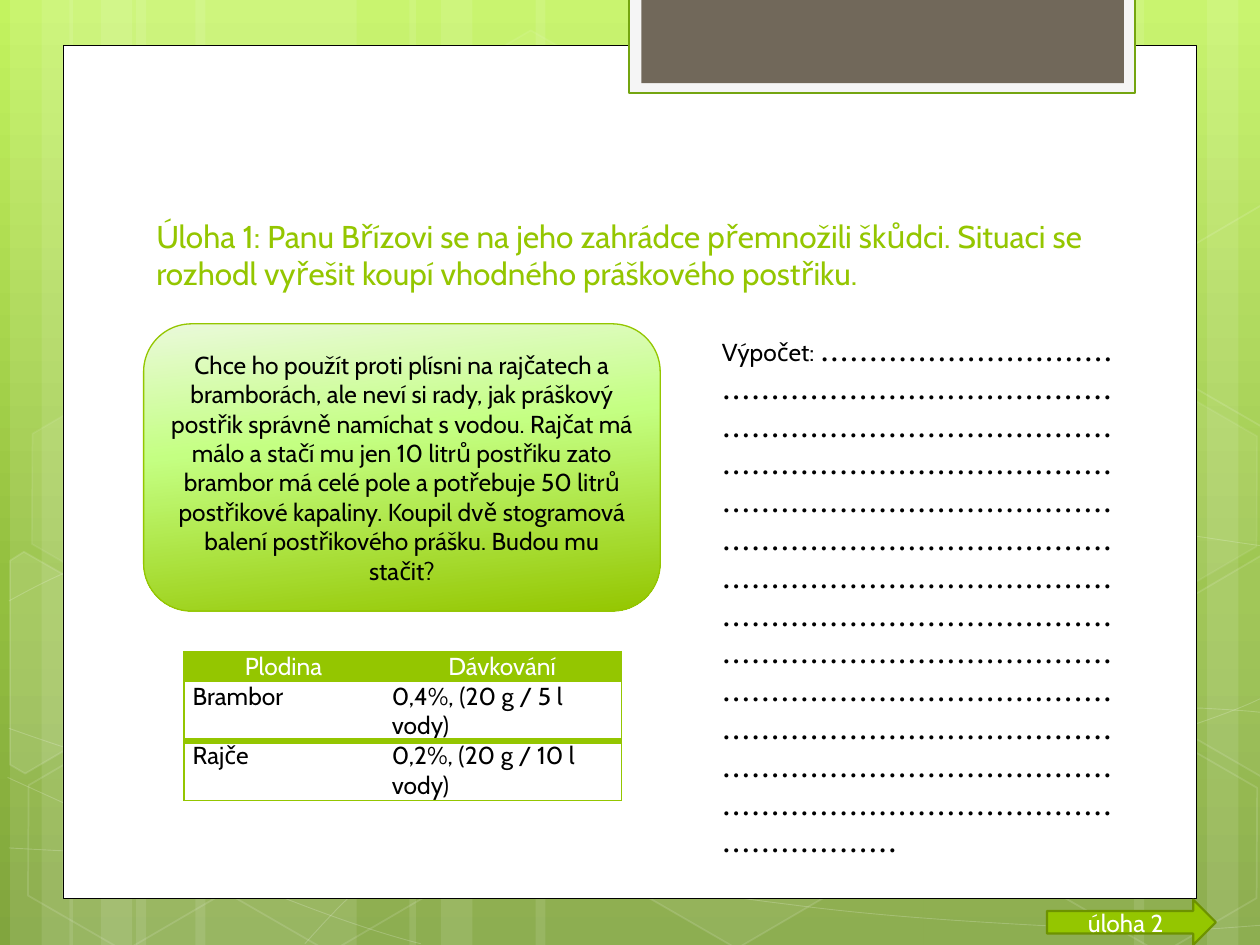
import lxml.etree
import pptx
import pptx.dml.color
import pptx.enum.shapes
import pptx.enum.text
import pptx.oxml
import pptx.oxml.ns
import pptx.util

COLORS = {"green": "94C600", "dark": "6D9200", "edge": "74A510", "white": "FFFFFF",
          "black": "000000", "pale": "F5F5F5", "brown": "71685A"}
SKY = [(0, "C3F35F"), (62, "93BF3F"), (100, "81A53E")]
LEAF = [(0, "EAF9DA"), (40, "C4FF82"), (100, "94C600")]
FONT = "Cabin"
PLAIN_TABLE = "{2D5ABB26-0587-4C30-8999-92F81FD0307C}"
SHAPE = pptx.enum.shapes.MSO_SHAPE
ALIGN = pptx.enum.text.PP_ALIGN
ANCHOR = pptx.enum.text.MSO_ANCHOR
qn = pptx.oxml.ns.qn

# Left edge and width of the full-height light stripes
STRIPES = [(1.08, 1.75), (0.08, 0.5), (0.33, 0.83), (1.55, 1.75), (0.55, 0.5), (0.8, 0.83),
           (7.33, 1.75), (9.58, 0.5), (9, 0.83), (4.25, 3.08), (3.25, 0.5), (3.5, 0.83)]
# Start point, then three points for each Bezier section
CURVES = [
    [(.07, 6.73), (.61, 6.76), (1.15, 6.79), (1.9, 6.78), (2.65, 6.77), (3.58, 6.75),
     (4.58, 6.65), (5.58, 6.55), (7, 6.36), (7.92, 6.17), (8.83, 5.98), (9.77, 5.68), (10.07, 5.51)],
    [(.07, 4.77), (.36, 4.61), (.65, 4.46), (1.21, 4.31), (1.78, 4.16), (2.59, 3.94),
     (3.47, 3.87), (4.36, 3.8), (5.44, 3.79), (6.54, 3.87), (7.64, 3.95), (9.47, 4.26), (10.07, 4.34)],
    [(.06, 6.17), (1.27, 6.72), (2.47, 7.27), (3.34, 7.49)],
    [(.07, 5.78), (.38, 5.89), (.7, 6), (1.28, 6.16), (1.86, 6.31), (2.73, 6.56), (3.57, 6.73),
     (4.4, 6.9), (5.45, 7.08), (6.28, 7.18), (7.11, 7.29), (8, 7.33), (8.53, 7.36),
     (9.05, 7.4), (9.19, 7.38), (9.45, 7.38), (9.71, 7.37), (9.89, 7.35), (10.07, 7.34)],
    [(2.42, 7.49), (2.6, 7.29), (2.78, 7.09), (3.02, 6.91), (3.26, 6.73), (3.6, 6.53), (3.88, 6.39),
     (4.16, 6.25), (4.33, 6.19), (4.7, 6.09), (5.06, 5.99), (5.73, 5.85), (6.08, 5.78),
     (6.44, 5.71), (6.49, 5.71), (6.8, 5.69), (7.11, 5.66), (7.6, 5.63), (7.94, 5.62),
     (8.29, 5.61), (8.86, 5.62), (8.86, 5.62), (9.1, 5.62), (9.3, 5.62), (9.53, 5.62),
     (9.71, 5.63), (9.88, 5.64), (9.97, 5.65), (10.06, 5.66), (10.03, 5.65), (10.06, 5.66)],
]
# Left, top, fill opacity (0 is no fill), line opacity
HEXAGONS = [(3.34, 0.36, 4, 8), (4.97, 5.89, 6, 12), (0.11, 5.91, 0, 12), (0.14, 3.12, 7, 8),
            (1.74, 5.92, 0, 12), (7.53, 4.53, 10, 12), (8.34, 5.93, 0, 12), (8.34, 3.14, 7, 8)]
# Hexagons cut off by the slide's edge: fill opacity, corners
CUT_HEXAGONS = [
    (10, [(.08, 4.45), (.19, 4.38), (.96, 4.82), (.95, 5.7), (.2, 6.14), (.08, 6.07)]),
    (4, [(9.26, 4.85), (10.01, 4.41), (10.09, 4.46), (10.09, 6.13), (10.02, 6.17), (9.26, 5.73)]),
    (0, [(9.26, 2.07), (10.01, 1.63), (10.1, 1.68), (10.09, 3.35), (10.02, 3.39), (9.26, 2.95)]),
]


def inches(*values):
    return [pptx.util.Inches(value) for value in values]


def rgb(name):
    return pptx.dml.color.RGBColor.from_string(COLORS[name])


def paint(fill, name, opacity=100):
    """Solid fill, partly transparent when opacity is below 100; none at 0."""
    if not (name and opacity):
        fill.background()
        return
    fill.solid()
    fill.fore_color.rgb = rgb(name)
    if opacity < 100:
        color = fill._xPr.find(".//" + qn("a:srgbClr"))
        lxml.etree.SubElement(color, qn("a:alpha"), val=str(opacity * 1000))


def paint_gradient(fill, stops, angle):
    fill.gradient()
    gradient = fill._xPr.find(qn("a:gradFill"))
    stop_list = gradient.find(qn("a:gsLst"))
    for stop in list(stop_list):
        stop_list.remove(stop)
    for position, color in stops:
        stop = lxml.etree.SubElement(stop_list, qn("a:gs"), pos=str(position * 1000))
        lxml.etree.SubElement(stop, qn("a:srgbClr"), val=color)
    gradient.find(qn("a:lin")).set("ang", str(angle * 60000))


def style(shape, fill=None, opacity=100, line=None, width=1, line_opacity=100):
    shape.shadow.inherit = False
    paint(shape.fill, fill, opacity)
    paint(shape.line.fill, line, line_opacity)
    if line:
        shape.line.width = pptx.util.Pt(width)


def add_box(page, kind, at, **look):
    box = page.shapes.add_shape(kind, *inches(*at))
    style(box, **look)
    return box


def add_outline(page, points, close, **look):
    corners = [inches(*point) for point in points]
    builder = page.shapes.build_freeform(*corners[0])
    builder.add_line_segments(corners[1:], close=close)
    outline = builder.convert_to_shape()
    style(outline, **look)
    return outline


def bend(outline):
    """Turn every three straight segments into one Bezier section."""
    track = outline._element.find(".//" + qn("a:path"))
    segments = track.findall(qn("a:lnTo"))
    for first in range(0, len(segments), 3):
        section = lxml.etree.SubElement(track, qn("a:cubicBezTo"))
        for segment in segments[first:first + 3]:
            section.append(segment[0])
            track.remove(segment)


def add_run(para, text, color="black", size=14, font=FONT):
    span = para.add_run()
    span.text = text
    span.font.size = pptx.util.Pt(size)
    span.font.name = font
    span.font.color.rgb = rgb(color)


def write(frame, text, color="black", size=14, align=ALIGN.CENTER, anchor=ANCHOR.MIDDLE):
    frame.word_wrap = True
    frame.auto_size = pptx.enum.text.MSO_AUTO_SIZE.NONE
    frame.vertical_anchor = anchor
    para = frame.paragraphs[0]
    para.alignment = align
    add_run(para, text, color, size)


def add_border(cell, side, width):
    edge = lxml.etree.Element(qn("a:ln" + side), w=str(int(pptx.util.Pt(width))))
    fill = lxml.etree.SubElement(edge, qn("a:solidFill"))
    lxml.etree.SubElement(fill, qn("a:srgbClr"), val=COLORS["green"])
    properties = cell._tc.get_or_add_tcPr()
    properties.insert(len(properties) - 1, edge)


def add_dose_table(page, at, rows, widths):
    table = page.shapes.add_table(len(rows), len(widths), *inches(*at)).table
    table._tbl.tblPr.find(qn("a:tableStyleId")).text = PLAIN_TABLE
    for column, width in zip(table.columns, widths):
        column.width = pptx.util.Inches(width)
    for r, texts in enumerate(rows):
        table.rows[r].height = pptx.util.Inches(0.23)
        for c, text in enumerate(texts):
            cell = table.cell(r, c)
            cell.margin_left = cell.margin_right = pptx.util.Inches(0.07)
            cell.margin_top = cell.margin_bottom = 0
            para = cell.text_frame.paragraphs[0]
            para.alignment = ALIGN.LEFT if r else ALIGN.CENTER
            add_run(para, text, "black" if r else "white")
            paint(cell.fill, None if r else "green")
            add_border(cell, "R" if c else "L", 0.75)
            add_border(cell, "T", 4 if r == 2 else 0.75)
            add_border(cell, "B", 4 if r == 1 else 0.75)


def add_backdrop(page):
    paint_gradient(page.background.fill, SKY, 90)
    for left, width in STRIPES:
        add_box(page, SHAPE.RECTANGLE, (left, 0, width, 7.5), fill="white", opacity=10)
    for points in CURVES:
        bend(add_outline(page, points, False, line="white", width=0.5, line_opacity=20))
    for left, top, opacity, line_opacity in HEXAGONS:
        hexagon = add_box(page, SHAPE.HEXAGON, (left, top, 1.75, 1.52), fill="white",
                          opacity=opacity, line="white", line_opacity=line_opacity)
        hexagon.adjustments[0], hexagon.adjustments[1] = 0.285, 1.155
        hexagon.rotation = 30
    for opacity, corners in CUT_HEXAGONS:
        add_outline(page, corners, True, fill="white", opacity=opacity, line="white", line_opacity=12)
    # Paper sheet and the tab at its top
    add_box(page, SHAPE.RECTANGLE, (0.5, 0.36, 9, 6.77), fill="white", line="black", width=0.5)
    add_box(page, SHAPE.RECTANGLE, (4.99, -0.02, 4.02, 0.76), fill="pale", line="edge", width=1.25)
    add_box(page, SHAPE.RECTANGLE, (5.09, -0.02, 3.83, 0.68), fill="brown")


def main():
    deck = pptx.Presentation()
    deck.slide_width, deck.slide_height = inches(10, 7.5)
    page = deck.slides.add_slide(deck.slide_layouts[5])
    add_backdrop(page)

    # Title, brought in front of the sheet
    title = page.shapes.title
    page.shapes._spTree.append(title._element)
    title.left, title.top, title.width, title.height = inches(1.14, 1.12, 7.68, 1.25)
    write(title.text_frame, "Úloha 1: Panu Břízovi se na jeho zahrádce přemnožili škůdci. "
          "Situaci se rozhodl vyřešit koupí vhodného práškového postřiku.",
          "green", 18, ALIGN.LEFT, ANCHOR.BOTTOM)

    # Dosage by crop
    add_dose_table(page, (1.46, 5.17, 3.47, 0.7),
                   [("Plodina", "Dávkování"), ("Brambor", "0,4%, (20 g / 5 l vody)"),
                    ("Rajče", "0,2%, (20 g / 10 l vody)")], (1.58, 1.89))

    # The problem
    problem = add_box(page, SHAPE.ROUNDED_RECTANGLE, (1.14, 2.57, 4.1, 2.28), line="green", width=0.75)
    paint_gradient(problem.fill, LEAF, 84)
    write(problem.text_frame, "Chce ho použít proti plísni na rajčatech a bramborách, ale neví si rady, "
          "jak práškový postřik správně namíchat s vodou. Rajčat má málo a stačí mu jen 10 litrů "
          "postřiku zato brambor má celé pole a potřebuje 50 litrů postřikové kapaliny. "
          "Koupil dvě stogramová balení postřikového prášku. Budou mu stačit?")

    # Dotted lines for the answer
    answer = page.shapes.add_textbox(*inches(5.63, 2.57, 3.31, 4.04)).text_frame
    write(answer, "Výpočet: ", align=ALIGN.LEFT, anchor=ANCHOR.TOP)
    add_run(answer.paragraphs[0], "." * 528, size=18, font="League Spartan")

    # Arrow to the next task
    arrow = add_box(page, SHAPE.RIGHT_ARROW, (8.31, 7.14, 1.34, 0.36), fill="green", line="dark", width=1.25)
    write(arrow.text_frame, "úloha 2", "white")
    deck.save("out.pptx")


if __name__ == "__main__":
    main()
